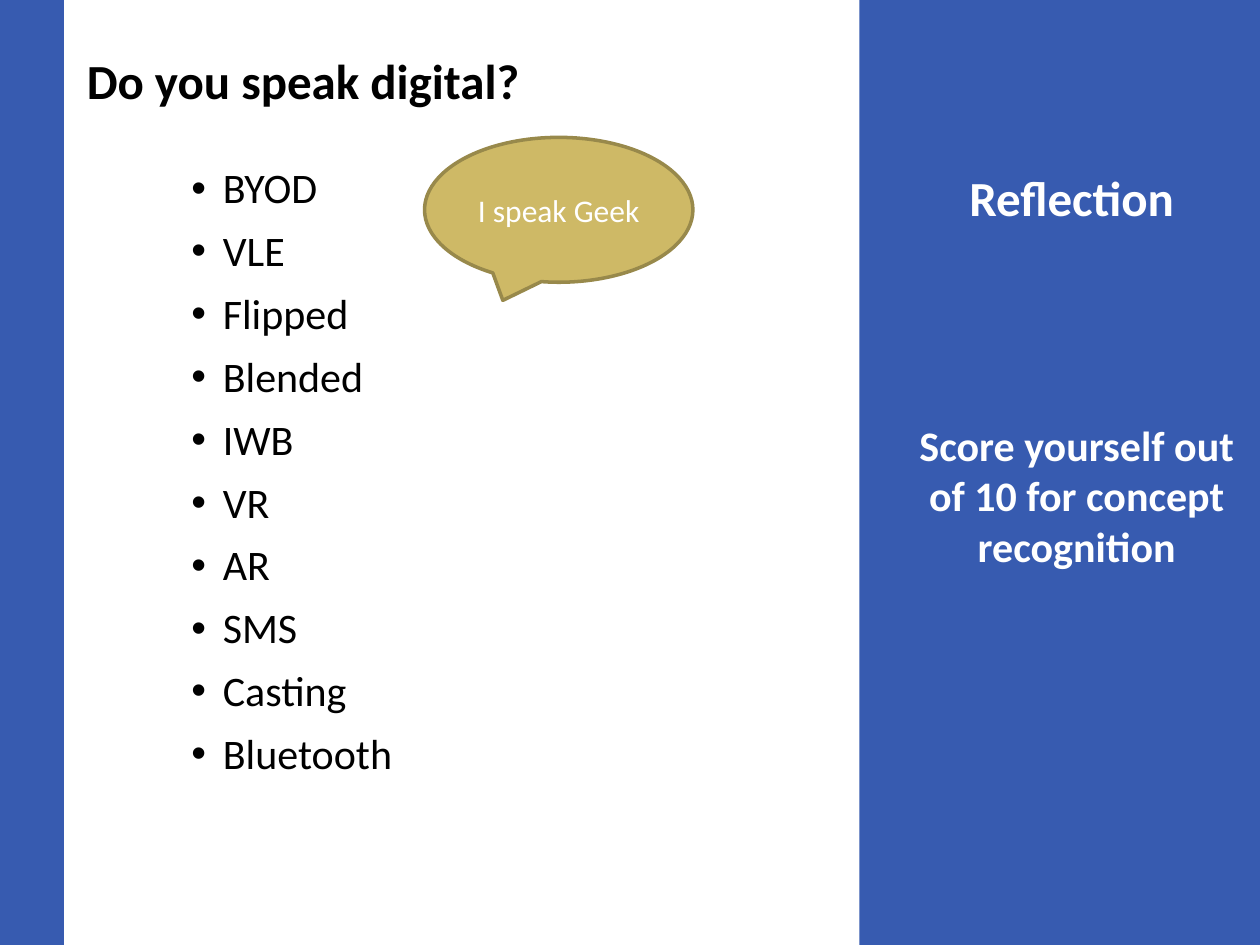
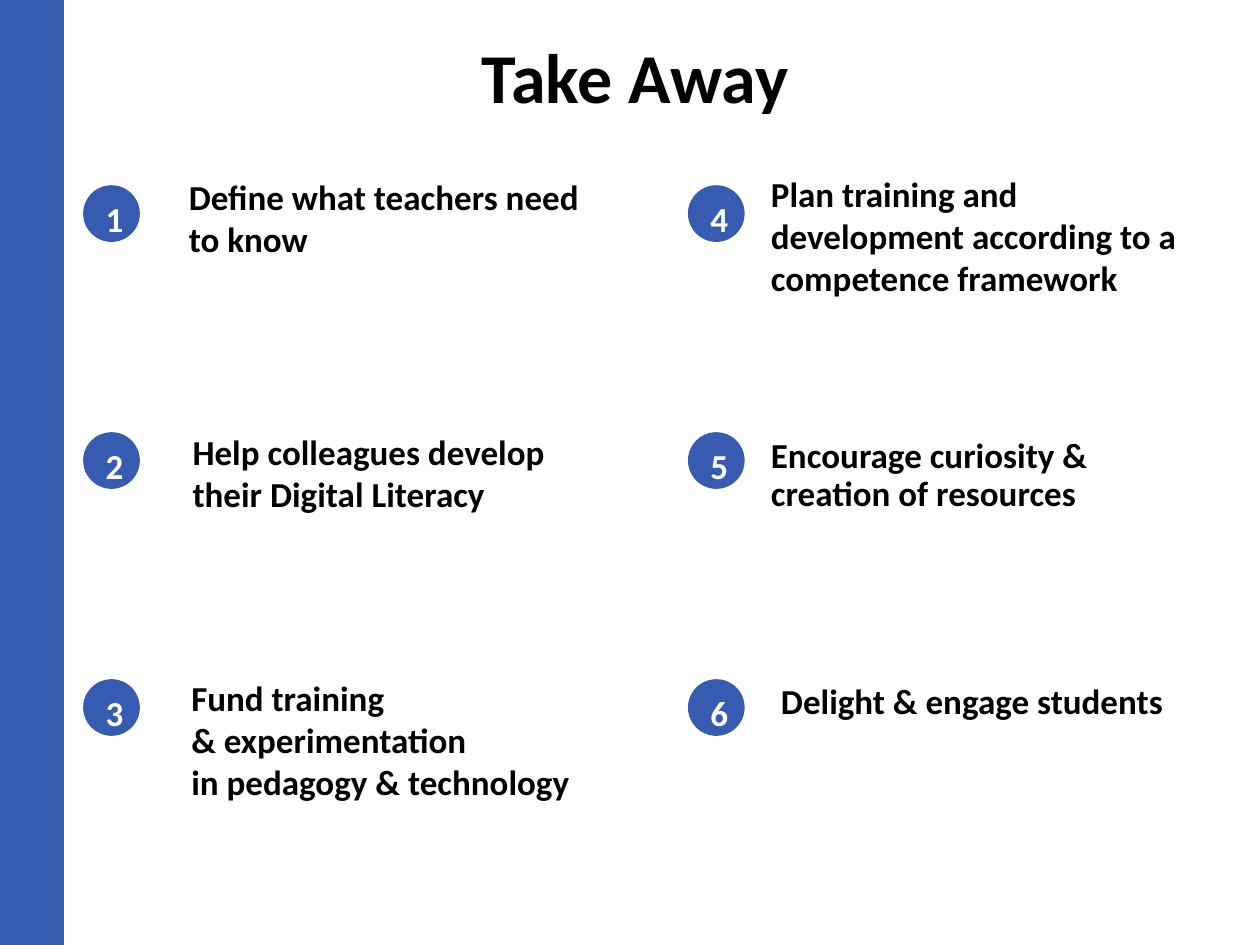
from lxml import etree
from pptx import Presentation
from pptx.dml.color import RGBColor
from pptx.enum.shapes import MSO_SHAPE as SHAPE
from pptx.enum.text import MSO_ANCHOR as ANCHOR, PP_ALIGN as ALIGN
from pptx.oxml.ns import qn
from pptx.util import Inches, Pt

BLUE = RGBColor(0x37, 0x5B, 0xB0)
WHITE = RGBColor(0xFF, 0xFF, 0xFF)
BLACK = RGBColor(0, 0, 0)
GOLD = RGBColor(0xCE, 0xB9, 0x66)
DARK_GOLD = RGBColor(0x98, 0x89, 0x4B)
FONT = "Calibri"

WIDTH, HEIGHT = Inches(10), Inches(7.5)
COLS, ROWS = 100, 75  # square grid cells
BAND = 5.1
BADGE_COLS = (6.6, 54.6)
BADGE_TOP, BADGE_STEP, BADGE_SIZE = 14.7, 19.6, 4.5

TERMS = ["BYOD", "VLE", "Flipped", "Blended", "IWB",
         "VR", "AR", "SMS", "Casting", "Bluetooth"]

# Text lines, box in grid cells, and paragraph format, in badge order
TAKEAWAYS = [
    (["Define what teachers need to know"], (14, 13.4, 34.6, 7.7), {}),
    (["Help colleagues develop their Digital Literacy"],
     (14.3, 33.7, 34.6, 7.7), {}),
    (["Fund training", "& experimentation", "in pedagogy & technology"],
     (14.2, 53.2, 37.4, 11.1), {}),
    (["Plan training and development according to a competence framework"],
     (60.2, 13.2, 37.3, 11.1), {}),
    (["Encourage curiosity &\vcreation of resources"],
     (60.2, 34.3, 32.8, 8.7), {"line": 0.9}),
    (["Delight & engage students"], (61, 53.4, 36.3, 4.4), {}),
]


def cells(x, y, w, h):
    """Turn grid columns and rows into slide lengths."""
    col, row = WIDTH / COLS, HEIGHT / ROWS
    return round(x * col), round(y * row), round(w * col), round(h * row)


def add_bullet(p):
    pPr = p._p.get_or_add_pPr()
    pPr.set("marL", str(Inches(0.25)))
    pPr.set("indent", str(-Inches(0.25)))
    etree.SubElement(pPr, qn("a:buFont")).set("typeface", "Arial")
    etree.SubElement(pPr, qn("a:buChar")).set("char", "•")


def write(sp, lines, size=20, color=BLACK, bold=True, align=ALIGN.LEFT,
          anchor=ANCHOR.TOP, line=None, gap=0, bullet=False):
    tf = sp.text_frame
    tf.word_wrap = True
    tf.vertical_anchor = anchor
    for i, text in enumerate(lines):
        p = tf.add_paragraph() if i else tf.paragraphs[0]
        p.text = text
        p.alignment = align
        if line:
            p.line_spacing = line
        p.space_before = Pt(gap if i else 0)
        if bullet:
            add_bullet(p)
        for r in p.runs:
            r.font.name, r.font.size, r.font.bold = FONT, Pt(size), bold
            r.font.color.rgb = color


def add_text(shapes, lines, box, **style):
    write(shapes.add_textbox(*cells(*box)), lines, **style)


def add_shape(shapes, kind, box, fill, outline=None):
    sp = shapes.add_shape(kind, *cells(*box))
    sp.shadow.inherit = False
    sp.fill.solid()
    sp.fill.fore_color.rgb = fill
    if outline:
        sp.line.color.rgb = outline
        sp.line.width = Pt(2)
    else:
        sp.line.fill.background()
    return sp


def add_badge(s, number, x, y):
    shapes = s.shapes.add_group_shape().shapes
    add_shape(shapes, SHAPE.OVAL, (x, y, BADGE_SIZE, BADGE_SIZE), BLUE)
    add_text(shapes, [str(number)], (x + 0.8, y + 0.5, 2.9, 4.4), color=WHITE)


def add_page(prs):
    """Add a blank slide with a white page beside the blue band."""
    s = prs.slides.add_slide(prs.slide_layouts[6])
    s.background.fill.solid()
    s.background.fill.fore_color.rgb = BLUE
    add_shape(s.shapes, SHAPE.RECTANGLE, (BAND, 0, COLS - BAND, ROWS), WHITE)
    return s


def build_reflection(prs):
    shapes = add_page(prs).shapes
    add_shape(shapes, SHAPE.RECTANGLE, (68.2, 0, 31.8, ROWS), BLUE)
    add_text(shapes, ["Do you speak digital?"], (5.9, 3.5, 51.2, 5.7), size=28)
    add_text(shapes, ["Reflection"], (70.5, 12.8, 29.1, 5.7),
             size=28, color=WHITE, align=ALIGN.CENTER)
    add_text(shapes, TERMS, (14.2, 12.8, 30.2, 49.8),
             size=24, bold=False, line=0.9, gap=10, bullet=True)
    callout = add_shape(shapes, SHAPE.OVAL_CALLOUT, (33.7, 10.9, 21.3, 11.5),
                        GOLD, DARK_GOLD)
    write(callout, ["I speak Geek"], size=18, color=WHITE, bold=False,
          align=ALIGN.CENTER, anchor=ANCHOR.MIDDLE)
    add_text(shapes, ["Score yourself out of 10 for concept recognition"],
             (70.9, 32.8, 29.1, 13.1), size=24, color=WHITE,
             align=ALIGN.CENTER)


def build_takeaways(prs):
    s = add_page(prs)
    add_text(s.shapes, ["Take Away"], (5.9, 2.2, 89, 7.7),
             size=40, align=ALIGN.CENTER)
    for i, (lines, box, style) in enumerate(TAKEAWAYS):
        col, row = divmod(i, 3)
        add_badge(s, i + 1, BADGE_COLS[col], BADGE_TOP + row * BADGE_STEP)
        add_text(s.shapes, lines, box, **style)


def main():
    prs = Presentation()
    prs.slide_width, prs.slide_height = WIDTH, HEIGHT
    build_reflection(prs)
    build_takeaways(prs)
    prs.save("out.pptx")


if __name__ == "__main__":
    main()
